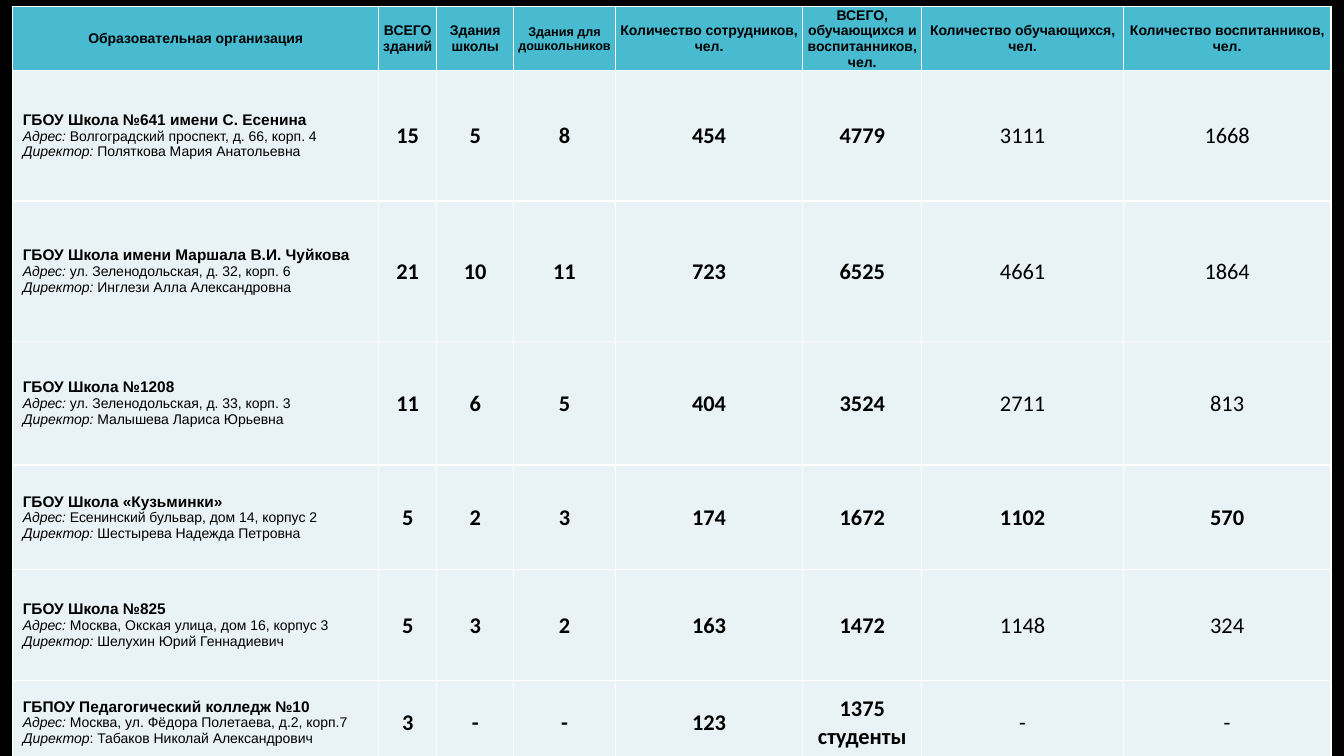
from lxml import etree
from pptx import Presentation
from pptx.dml.color import RGBColor
from pptx.enum.text import MSO_ANCHOR, PP_ALIGN
from pptx.oxml.ns import qn
from pptx.util import Cm, Pt

BLACK = RGBColor(0x00, 0x00, 0x00)
WHITE = RGBColor(0xFF, 0xFF, 0xFF)
TEAL = RGBColor(0x49, 0xBB, 0xD1)
PALE = RGBColor(0xE9, 0xF2, 0xF4)

HEADERS = [
    "Образовательная организация",
    "ВСЕГО зданий",
    "Здания школы",
    "Здания для дошкольников",
    "Количество сотрудников, чел.",
    "ВСЕГО, обучающихся и воспитанников, чел.",
    "Количество обучающихся, чел.",
    "Количество воспитанников, чел.",
]
SMALL_HEADER = 3

SCHOOLS = [
    ("ГБОУ Школа №641 имени С. Есенина",
     [("Адрес:", " Волгоградский проспект, д. 66, корп. 4"),
      ("Директор:", " Поляткова Мария Анатольевна")],
     ["15", "5", "8", "454", "4779", "3111", "1668"]),
    ("ГБОУ Школа имени Маршала В.И. Чуйкова",
     [("Адрес:", " ул. Зеленодольская, д. 32, корп. 6"),
      ("Директор:", " Инглези Алла Александровна")],
     ["21", "10", "11", "723", "6525", "4661", "1864"]),
    ("ГБОУ Школа №1208",
     [("Адрес:", " ул. Зеленодольская, д. 33, корп. 3"),
      ("Директор:", " Малышева Лариса Юрьевна")],
     ["11", "6", "5", "404", "3524", "2711", "813"]),
    ("ГБОУ Школа «Кузьминки»",
     [("Адрес:", " Есенинский бульвар, дом 14, корпус 2"),
      ("Директор:", " Шестырева Надежда Петровна")],
     ["5", "2", "3", "174", "1672", "1102", "570"]),
    ("ГБОУ Школа №825",
     [("Адрес:", " Москва, Окская улица, дом 16, корпус 3"),
      ("Директор:", " Шелухин Юрий Геннадиевич")],
     ["5", "3", "2", "163", "1472", "1148", "324"]),
    ("ГБПОУ Педагогический колледж №10",
     [("Адрес:", " Москва, ул. Фёдора Полетаева, д.2, корп.7"),
      ("Директор", ": Табаков Николай Александрович")],
     ["3", "-", "-", "123", "1375\nстуденты", "-", "-"]),
]
FIRST_LIGHT_COLUMN = 6
ALL_BOLD_SCHOOL = "ГБОУ Школа «Кузьминки»"

COLUMN_WIDTHS = [9.22, 1.47, 1.93, 2.57, 4.72, 3, 5.08, 5.23]
ROW_HEIGHTS = [1, 3.3, 3.53, 3.12, 2.64, 2.79, 2.11]


def style_cell(cell, fill, tight):
    cell.vertical_anchor = MSO_ANCHOR.MIDDLE
    if tight:
        cell.margin_left = cell.margin_right = cell.margin_top = Cm(0.02)
        cell.margin_bottom = 0
    properties = cell._tc.get_or_add_tcPr()
    for side in ("a:lnL", "a:lnR", "a:lnT", "a:lnB"):
        line = etree.SubElement(properties, qn(side), w=str(Pt(1)))
        solid = etree.SubElement(line, qn("a:solidFill"))
        etree.SubElement(solid, qn("a:srgbClr"), val=str(WHITE))
    cell.fill.solid()
    cell.fill.fore_color.rgb = fill


def style_font(paragraph, size, name="Arial", bold=False):
    font = paragraph.font
    font.size = Pt(size)
    font.name = name
    font.bold = bold
    font.color.rgb = BLACK


def write_centred(cell, value, size, name, bold):
    paragraph = cell.text_frame.paragraphs[0]
    paragraph.text = value
    paragraph.alignment = PP_ALIGN.CENTER
    style_font(paragraph, size, name, bold)


def write_school(cell, title, details):
    frame = cell.text_frame
    frame.paragraphs[0].text = title
    style_font(frame.paragraphs[0], 11, bold=True)
    for label, value in details:
        paragraph = frame.add_paragraph()
        style_font(paragraph, 10)
        label_run = paragraph.add_run()
        label_run.text = label
        label_run.font.italic = True
        paragraph.add_run().text = value


def main():
    presentation = Presentation()
    presentation.slide_width, presentation.slide_height = Cm(33.87), Cm(19.05)
    slide = presentation.slides.add_slide(presentation.slide_layouts[6])
    slide.background.fill.solid()
    slide.background.fill.fore_color.rgb = BLACK

    table = slide.shapes.add_table(
        len(ROW_HEIGHTS), len(COLUMN_WIDTHS), Cm(0.32), Cm(0.17),
        Cm(sum(COLUMN_WIDTHS)), Cm(sum(ROW_HEIGHTS))).table
    table.first_row = table.horz_banding = False
    for column, width in zip(table.columns, COLUMN_WIDTHS):
        column.width = Cm(width)
    for row, height in zip(table.rows, ROW_HEIGHTS):
        row.height = Cm(height)

    for column, header in enumerate(HEADERS):
        cell = table.cell(0, column)
        style_cell(cell, TEAL, column > 0)
        write_centred(cell, header, 9 if column == SMALL_HEADER else 10, "Arial", True)

    for row, (title, details, values) in enumerate(SCHOOLS, 1):
        style_cell(table.cell(row, 0), PALE, False)
        write_school(table.cell(row, 0), title, details)
        for column, value in enumerate(values, 1):
            cell = table.cell(row, column)
            style_cell(cell, PALE, True)
            bold = column < FIRST_LIGHT_COLUMN or title == ALL_BOLD_SCHOOL
            write_centred(cell, value, 16, "Calibri", bold)

    presentation.save("out.pptx")


if __name__ == "__main__":
    main()
